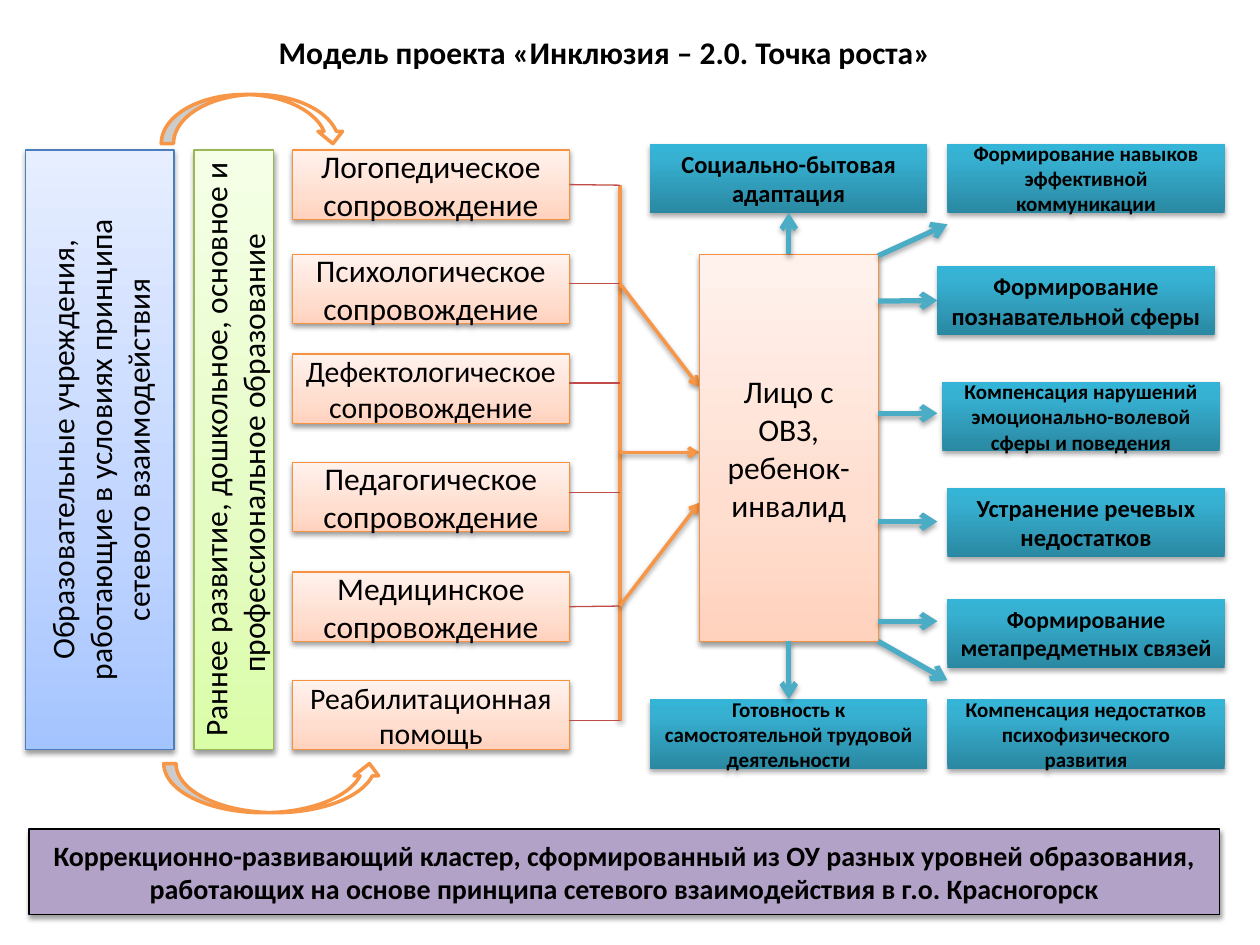
from lxml import etree
from pptx import Presentation
from pptx.dml.color import RGBColor
from pptx.enum import shapes, text
from pptx.oxml import ns
from pptx.util import Inches, Pt

COLORS = {
    "text": "000000", "white": "FFFFFF", "orange": "F79646", "orange_edge": "F69240",
    "blue_edge": "4B7EBC", "green_edge": "98B955", "red": "BF4C48",
    "teal": "4BACC6", "purple": "B3A2C7",
}
GRADIENTS = {
    "peach": [(0, "FFD2BD"), (35, "FFDED0"), (100, "FFF2ED")],
    "blue": [(0, "A4C4FF"), (35, "BFD4FF"), (100, "E6EEFF")],
    "green": [(0, "DAFDA7"), (35, "E4FCC2"), (100, "F5FFE7")],
    "teal": [(0, "2A88A2"), (80, "37B1D2"), (100, "34B4D6")],
}
SOFT = (38, 1.6)
STRONG = (35, 1.8)
PROCESS = shapes.MSO_SHAPE.FLOWCHART_PROCESS
BOX_W, BOX_H = 2.2, 0.55
SUPPORT_X, BUS_X = 2.32, 4.92
PERSON_X, PERSON_Y, PERSON_W, PERSON_H = 5.55, 2.02, 1.42, 3.07
PERSON_RIGHT = PERSON_X + PERSON_W
PERSON_BOTTOM = PERSON_Y + PERSON_H

SUPPORTS = [
    ("Логопедическое сопровождение", 1.19, 18, 1.47),
    ("Психологическое сопровождение", 2.02, 18, 2.25),
    ("Дефектологическое сопровождение", 2.81, 17, 3.04),
    ("Педагогическое сопровождение", 3.67, 18, 3.91),
    ("Медицинское сопровождение", 4.54, 18, 4.81),
    ("Реабилитационная помощь", 5.4, 17, 5.72),
]
RESULTS = [
    ("Социально-бытовая адаптация", 5.16, 1.14, 14),
    ("Формирование навыков эффективной коммуникации", 7.52, 1.14, 12),
    ("Формирование познавательной сферы", 7.44, 2.11, 14),
    ("Компенсация нарушений эмоционально-волевой сферы и поведения", 7.48, 3.03, 12),
    ("Устранение речевых недостатков", 7.52, 3.87, 14),
    ("Формирование метапредметных связей", 7.52, 4.75, 13.5),
    ("Компенсация недостатков психофизического развития", 7.52, 5.55, 12),
    ("Готовность к самостоятельной трудовой деятельности", 5.16, 5.55, 12),
]


def rgb(name):
    return RGBColor.from_string(COLORS[name])


def add_part(parent, tag, **attributes):
    return etree.SubElement(parent, ns.qn(tag), attributes)


def set_effects(element, shadow):
    properties = element.spPr
    for old in properties.findall(ns.qn("a:effectLst")):
        properties.remove(old)
    effects = add_part(properties, "a:effectLst")
    if shadow:
        alpha, distance = shadow
        outer = add_part(effects, "a:outerShdw", blurRad=str(Pt(3.1)), dist=str(Pt(distance)),
                         dir="5400000", rotWithShape="0")
        color = add_part(outer, "a:srgbClr", val=COLORS["text"])
        add_part(color, "a:alpha", val=str(alpha * 1000))


def set_gradient(shape, name):
    shape.fill.gradient()
    shape.fill.gradient_angle = 90
    stops = shape._element.spPr.find(".//" + ns.qn("a:gsLst"))
    for old in list(stops):
        stops.remove(old)
    for position, color in GRADIENTS[name]:
        stop = add_part(stops, "a:gs", pos=str(position * 1000))
        add_part(stop, "a:srgbClr", val=color)


def write(frame, words, size, bold=False):
    frame.word_wrap = True
    frame.text = words
    paragraph = frame.paragraphs[0]
    paragraph.alignment = text.PP_ALIGN.CENTER
    paragraph.font.name = "Calibri"
    paragraph.font.size = Pt(size)
    paragraph.font.bold = bold
    paragraph.font.color.rgb = rgb("text")


def add_box(slide, place, words, size, fill, edge=None, bold=False, shadow=SOFT,
            vertical=False, kind=PROCESS):
    box = slide.shapes.add_shape(kind, *map(Inches, place))
    if fill in GRADIENTS:
        set_gradient(box, fill)
    else:
        box.fill.solid()
        box.fill.fore_color.rgb = rgb(fill)
    if edge:
        box.line.color.rgb = rgb(edge)
        box.line.width = Pt(0.75)
    else:
        box.line.fill.background()
    set_effects(box._element, shadow)
    write(box.text_frame, words, size, bold)
    box.text_frame.vertical_anchor = text.MSO_ANCHOR.MIDDLE
    if vertical:
        box.text_frame._txBody.bodyPr.set("vert", "vert270")
    return box


def add_line(slide, start, end, color, width, shadow=None, arrow=False):
    line = slide.shapes.add_connector(shapes.MSO_CONNECTOR.STRAIGHT, *map(Inches, start + end))
    line.line.color.rgb = rgb(color)
    line.line.width = Pt(width)
    if arrow:
        add_part(line.line._get_or_add_ln(), "a:tailEnd", type="arrow")
    set_effects(line._element, shadow)
    return line


def add_curved_arrow(slide, kind, place):
    arrow = slide.shapes.add_shape(kind, *map(Inches, place))
    arrow.fill.solid()
    arrow.fill.fore_color.rgb = rgb("white")
    arrow.line.color.rgb = rgb("orange")
    arrow.line.width = Pt(2)
    arrow.shadow.inherit = False


def add_title(slide):
    title = slide.shapes.title
    title.left, title.top, title.width, title.height = map(Inches, (0.98, 0.21, 7.64, 0.4))
    write(title.text_frame, "Модель проекта «Инклюзия – 2.0. Точка роста»", 18, True)
    title.text_frame.vertical_anchor = text.MSO_ANCHOR.TOP


def add_supports(slide):
    boxes = [add_box(slide, (SUPPORT_X, top, BOX_W, BOX_H), words, size, "peach", "orange_edge")
             for words, top, size, _ in SUPPORTS]
    add_line(slide, (BUS_X, SUPPORTS[0][3]), (BUS_X, SUPPORTS[-1][3]), "orange", 2, SOFT)
    for box, (_, top, _, y) in zip(boxes, SUPPORTS):
        branch = add_line(slide, (SUPPORT_X + BOX_W, y), (BUS_X, y), "red", 0.75)
        if abs(top + BOX_H / 2 - y) < 0.01:
            branch.begin_connect(box, 3)
    for start, end in [(2.25, 3.07), (3.59, 3.59), (4.81, 3.99)]:
        add_line(slide, (BUS_X, start), (PERSON_X, end), "orange", 2, SOFT, True)


def add_results(slide, person):
    boxes = [add_box(slide, (left, top, BOX_W, BOX_H), words, size, "teal", bold=True, shadow=STRONG)
             for words, left, top, size in RESULTS]
    adaptation, cognition, readiness = boxes[0], boxes[2], boxes[-1]
    level_arrows = [add_line(slide, (PERSON_RIGHT, y), (7.44, y), "teal", 3, STRONG, True)
                    for y in (2.39, 3.28, 4.14, 4.93)]
    level_arrows[0].end_connect(cognition, 1)
    for start, end in [(2.03, 1.78), (PERSON_BOTTOM, 5.4)]:
        add_line(slide, (PERSON_RIGHT, start), (7.52, end), "teal", 3, STRONG, True)
    middle = PERSON_X + PERSON_W / 2
    for start, end, box, out_site, in_site in [
        (PERSON_Y, 1.69, adaptation, 0, 2),
        (PERSON_BOTTOM, 5.55, readiness, 2, 0),
    ]:
        arrow = add_line(slide, (middle, start), (middle, end), "teal", 3, STRONG, True)
        arrow.begin_connect(person, out_site)
        arrow.end_connect(box, in_site)


def main():
    deck = Presentation()
    deck.slide_width, deck.slide_height = Inches(10), Inches(7.5)
    slide = deck.slides.add_slide(deck.slide_layouts[5])
    add_title(slide)
    add_supports(slide)
    add_box(slide, (0.2, 1.19, 1.18, 4.76),
            "Образовательные учреждения, работающие в условиях принципа сетевого взаимодействия",
            18, "blue", "blue_edge", vertical=True)
    add_curved_arrow(slide, shapes.MSO_SHAPE.CURVED_UP_ARROW, (1.3, 6.06, 1.73, 0.39))
    add_curved_arrow(slide, shapes.MSO_SHAPE.CURVED_DOWN_ARROW, (1.28, 0.75, 1.46, 0.39))
    person = add_box(slide, (PERSON_X, PERSON_Y, PERSON_W, PERSON_H), "Лицо с ОВЗ, ребенок-инвалид",
                     18, "peach", "orange_edge", kind=shapes.MSO_SHAPE.RECTANGLE)
    add_box(slide, (1.54, 1.19, 0.63, 4.76),
            "Раннее развитие, дошкольное, основное и профессиональное образование ",
            18, "green", "green_edge", vertical=True)
    add_results(slide, person)
    add_box(slide, (0.23, 6.58, 9.45, 0.68),
            "Коррекционно-развивающий кластер, сформированный из ОУ разных уровней образования, "
            "работающих на основе принципа сетевого взаимодействия в г.о. Красногорск",
            16, "purple", "text", bold=True)
    deck.save("out.pptx")


if __name__ == "__main__":
    main()
